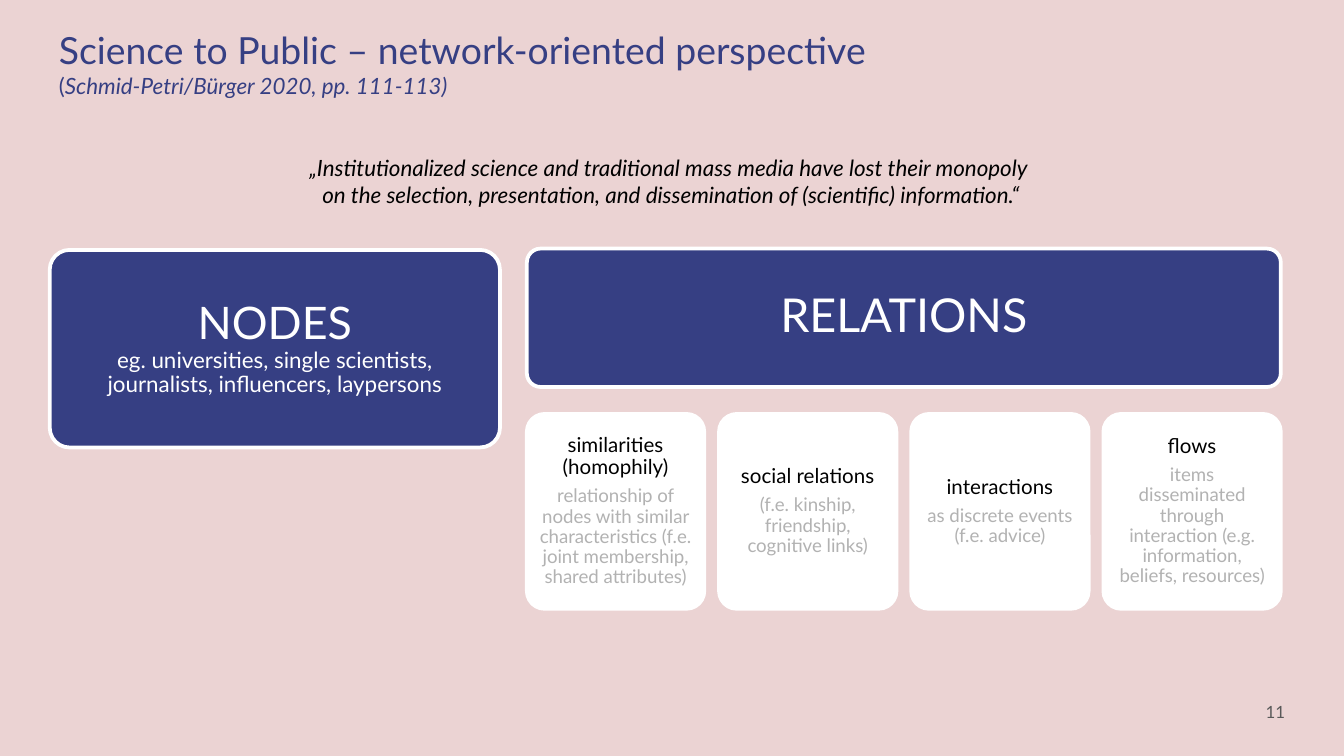
"""Build a slide on the network-oriented view of science communication."""
import copy
from dataclasses import dataclass

import pptx
import pptx.dml.color
import pptx.enum.shapes
import pptx.enum.text
import pptx.util

Inches = pptx.util.Inches
Pt = pptx.util.Pt
ALIGN = pptx.enum.text.PP_ALIGN
ANCHOR = pptx.enum.text.MSO_ANCHOR

BLUE, WHITE, BLACK = "363F83", "FFFFFF", "000000"
GREY, DARK_GREY, PINK = "B2B2B2", "595959", "EBD3D3"


@dataclass
class Run:
    text: str
    size: float
    color: str
    italic: bool = False
    break_after: bool = False


@dataclass
class Card:
    heading: str
    detail: str


CARDS = [
    Card("similarities (homophily)",
         "relationship of nodes with similar characteristics (f.e. joint membership, shared attributes)"),
    Card("social relations", "(f.e. kinship, friendship, cognitive links)"),
    Card("interactions", "as discrete events (f.e. advice)"),
    Card("flows",
         "items disseminated through interaction (e.g. information, beliefs, resources)"),
]


def rgb(value: str) -> pptx.dml.color.RGBColor:
    return pptx.dml.color.RGBColor.from_string(value)


def write(s, paragraphs: list[list[Run]], *, align=ALIGN.LEFT, anchor=ANCHOR.TOP,
          inset_x: float = 0.1, inset_y: float = 0.1,
          spacing: float = 1.0, after: float = 0) -> None:
    tf = s.text_frame
    tf.word_wrap = True
    tf.vertical_anchor = anchor
    tf.margin_left = tf.margin_right = Inches(inset_x)
    tf.margin_top = tf.margin_bottom = Inches(inset_y)
    for i, runs in enumerate(paragraphs):
        p = tf.paragraphs[0] if i == 0 else tf.add_paragraph()
        p.alignment = align
        p.line_spacing = spacing
        p.space_after = Pt(after)
        for run in runs:
            r = p.add_run()
            r.text = run.text
            r.font.name = "Lato"
            r.font.size = Pt(run.size)
            r.font.italic = run.italic
            r.font.color.rgb = rgb(run.color)
            if run.break_after:
                p.add_line_break()
                p._p[-1].append(copy.deepcopy(r._r.rPr))


def add_text(sp, box: tuple, paragraphs: list[list[Run]], **fmt) -> None:
    write(sp.add_textbox(*map(Inches, box)), paragraphs, **fmt)


def add_box(sp, box: tuple, fill: str, paragraphs: list[list[Run]], inset: float) -> None:
    s = sp.add_shape(pptx.enum.shapes.MSO_SHAPE.ROUNDED_RECTANGLE, *map(Inches, box))
    s.adjustments[0] = 0.1
    s.shadow.inherit = False
    s.fill.solid()
    s.fill.fore_color.rgb = rgb(fill)
    s.line.color.rgb = rgb(WHITE)
    s.line.width = Pt(2)
    write(s, paragraphs, align=ALIGN.CENTER, anchor=ANCHOR.MIDDLE,
          inset_x=inset, inset_y=inset, spacing=0.9, after=4)


def main() -> None:
    prs = pptx.Presentation()
    prs.slide_width = Inches(10)
    prs.slide_height = Inches(10 * 9 / 16)
    slide = prs.slides.add_slide(prs.slide_layouts[6])
    slide.background.fill.solid()
    slide.background.fill.fore_color.rgb = rgb(PINK)
    sp = slide.shapes

    add_text(sp, (0.34, 0.1, 7.44, 0.63), [[
        Run("Science to Public – network-oriented perspective", 20, BLUE, break_after=True),
        Run("(", 12, BLUE),
        Run("Schmid-Petri/Bürger 2020, pp. 111-113)", 12, BLUE, italic=True),
    ]])
    add_text(sp, (9.06, 5.08, 0.6, 0.43), [[Run("11", 9, DARK_GREY)]],
             align=ALIGN.RIGHT, anchor=ANCHOR.MIDDLE)

    add_box(sp, (0.37, 1.86, 3.35, 1.47), BLUE, [[
        Run("NODES", 24, WHITE, break_after=True),
        Run("eg. universities, single scientists, journalists, influencers, laypersons", 12, WHITE),
    ]], inset=0.1)
    add_box(sp, (3.92, 1.85, 5.61, 1.03), BLUE, [[Run("RELATIONS", 25, WHITE)]], inset=0.1)
    for i, card in enumerate(CARDS):
        add_box(sp, (3.92 + i * 1.43, 3.08, 1.32, 1.45), WHITE,
                [[Run(card.heading, 11, BLACK)], [Run(card.detail, 10, GREY)]], inset=0.05)

    add_text(sp, (0.45, 1.1, 9.09, 0.5), [[
        Run("„Institutionalized science and traditional mass media have lost their monopoly ",
            12, BLACK, italic=True, break_after=True),
        Run("on the selection, presentation, and dissemination of (scientific) information.“",
            12, BLACK, italic=True),
    ]], align=ALIGN.CENTER, inset_y=0.05)

    prs.save("out.pptx")


if __name__ == "__main__":
    main()
